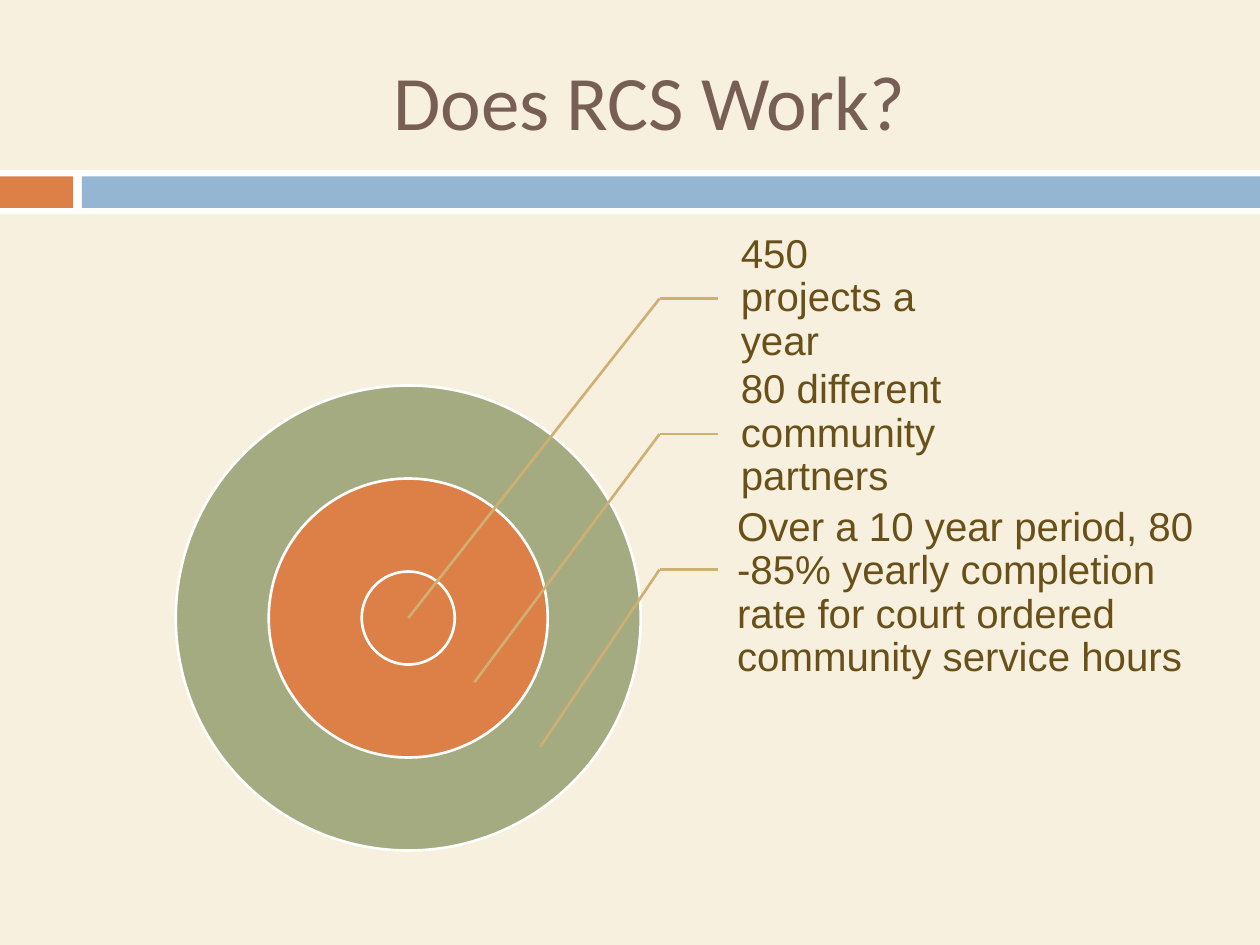
from pptx import Presentation
from pptx.dml.color import RGBColor
from pptx.enum.shapes import MSO_CONNECTOR as Connector, MSO_SHAPE as Shape
from pptx.enum.text import MSO_ANCHOR as Anchor, PP_ALIGN as Align
from pptx.oxml.ns import qn
from pptx.util import Inches, Pt

CREAM = RGBColor(0xF7, 0xF0, 0xDE)
WHITE = RGBColor(0xFF, 0xFF, 0xFF)
ORANGE = RGBColor(0xDD, 0x80, 0x47)
BLUE = RGBColor(0x94, 0xB6, 0xD2)
GREEN = RGBColor(0xA5, 0xAB, 0x81)
SAND = RGBColor(0xD0, 0xAF, 0x72)
TAUPE = RGBColor(0x77, 0x5F, 0x55)
BROWN = RGBColor(0x69, 0x50, 0x19)

COLUMNS, ROWS = 100, 75
CENTER_X, CENTER_Y = 32.4, 49.05
RING_STEP = 7.38
ELBOW_X, LABEL_X = 52.35, 57
FIRST_LEADER_Y, LEADER_PITCH = 23.7, 10.75
TARGET_STEP_X, TARGET_STEP_Y = 5.25, 5.1


class TargetSlide:
    """Draws styled elements on a slide divided into 100 columns and 75 rows."""

    def __init__(self, presentation):
        self.slide = presentation.slides.add_slide(presentation.slide_layouts[6])
        self.column = presentation.slide_width / COLUMNS
        self.row = presentation.slide_height / ROWS
        background = self.slide.background.fill
        background.solid()
        background.fore_color.rgb = CREAM

    def place(self, x, y):
        return round(x * self.column), round(y * self.row)

    def shape(self, kind, x, y, width, height, color, outline=None):
        shape = self.slide.shapes.add_shape(
            kind, *self.place(x, y), *self.place(width, height))
        shape.shadow.inherit = False
        shape.fill.solid()
        shape.fill.fore_color.rgb = color
        if outline is None:
            shape.line.fill.background()
        else:
            shape.line.color.rgb = outline
            shape.line.width = Pt(1.5)
        return shape

    def ring(self, diameter, color):
        return self.shape(Shape.OVAL, CENTER_X - diameter / 2,
                          CENTER_Y - diameter / 2, diameter, diameter, color, WHITE)

    def text(self, words, x, y, width, height, font, size, color,
             align=Align.LEFT, spacing=1.0, left_inset=0.1, inset=0.05):
        box = self.slide.shapes.add_textbox(
            *self.place(x, y), *self.place(width, height))
        frame = box.text_frame
        frame.word_wrap = True
        frame.vertical_anchor = Anchor.MIDDLE
        frame.margin_left = Inches(left_inset)
        frame.margin_right = frame.margin_top = frame.margin_bottom = Inches(inset)
        paragraph = frame.paragraphs[0]
        paragraph.alignment = align
        paragraph.line_spacing = spacing
        run = paragraph.add_run()
        run.text = words
        run.font.name = font
        run.font.size = Pt(size)
        run.font.color.rgb = color
        return box

    def label(self, words, x, middle, width):
        height = 10.8
        return self.text(words, x, middle - height / 2, width, height, "Arial", 23,
                         BROWN, spacing=0.9, left_inset=0.18, inset=0.03)

    def line(self, start, end):
        line = self.slide.shapes.add_connector(
            Connector.STRAIGHT, *self.place(*start), *self.place(*end))
        line.line.color.rgb = SAND
        line.line.width = Pt(1.5)
        properties = line._element.spPr
        properties.append(properties.makeelement(qn("a:effectLst"), {}))
        return line


def main():
    presentation = Presentation()
    presentation.slide_width = Inches(10)
    presentation.slide_height = Inches(7.5)
    target = TargetSlide(presentation)

    for x, y, width, height, color in (
            (0, 13.5, 100, 3.5, WHITE),
            (0, 14, 5.8, 2.5, ORANGE),
            (6.5, 14, 93.5, 2.5, BLUE)):
        target.shape(Shape.RECTANGLE, x, y, width, height, color)
    target.text("Does RCS Work?", 6.7, 2.5, 89.2, 10.8, "Calibri", 44, TAUPE,
                Align.CENTER)

    for steps, color in ((5, GREEN), (3, ORANGE), (1, ORANGE)):
        target.ring(steps * RING_STEP, color)

    callouts = (
        ("450 projects a year", LABEL_X, 0, 18.4),
        ("80 different community partners", LABEL_X, 0, 18.4),
        ("Over a 10 year period, 80 -85% yearly completion rate for court "
         "ordered community service hours", 56.7, 1.9, 41.4),
    )
    for index, (words, x, drop, width) in enumerate(callouts):
        y = FIRST_LEADER_Y + index * LEADER_PITCH
        label = target.label(words, x, y + drop, width)
        leader = target.line((ELBOW_X, y), (LABEL_X, y))
        if drop == 0:
            leader.end_connect(label, 1)
        target.line((ELBOW_X, y), (CENTER_X + index * TARGET_STEP_X,
                                   CENTER_Y + index * TARGET_STEP_Y))

    presentation.save("out.pptx")


if __name__ == "__main__":
    main()
